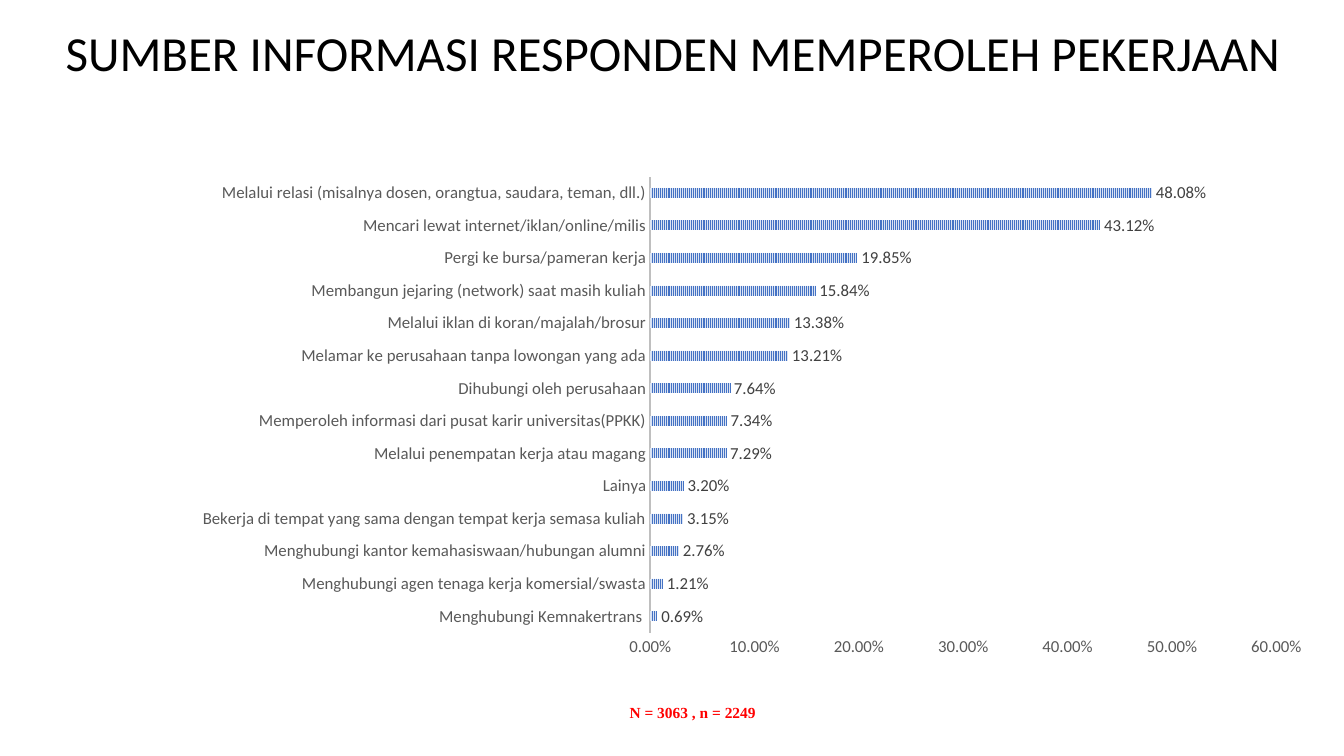
from pptx import Presentation
from pptx.chart.data import CategoryChartData
from pptx.dml.color import RGBColor
from pptx.enum.chart import XL_CHART_TYPE as ChartType
from pptx.enum.chart import XL_LABEL_POSITION as LabelPos
from pptx.enum.chart import XL_TICK_MARK as Tick
from pptx.enum.dml import MSO_PATTERN as Pattern
from pptx.enum.text import MSO_ANCHOR as Anchor
from pptx.enum.text import PP_ALIGN as Align
from pptx.oxml import parse_xml
from pptx.oxml.ns import nsdecls, qn
from pptx.util import Inches, Pt

COLORS = {
    "black": "000000", "axis_text": "595959", "axis_line": "BFBFBF",
    "label": "404040", "bar": "4472C4", "bar_back": "DAE3F3", "note": "FF0000",
}
PERCENT = "0.00%"

SOURCES = [
    ("Menghubungi Kemnakertrans ", 0.0069),
    ("Menghubungi agen tenaga kerja komersial/swasta", 0.0121),
    ("Menghubungi kantor kemahasiswaan/hubungan alumni", 0.0276),
    ("Bekerja di tempat yang sama dengan tempat kerja semasa kuliah", 0.0315),
    ("Lainya", 0.032),
    ("Melalui penempatan kerja atau magang", 0.0729),
    ("Memperoleh informasi dari pusat karir universitas(PPKK)", 0.0734),
    ("Dihubungi oleh perusahaan", 0.0764),
    ("Melamar ke perusahaan tanpa lowongan yang ada", 0.1321),
    ("Melalui iklan di koran/majalah/brosur", 0.1338),
    ("Membangun jejaring (network) saat masih kuliah", 0.1584),
    ("Pergi ke bursa/pameran kerja", 0.1985),
    ("Mencari lewat internet/iklan/online/milis", 0.4312),
    ("Melalui relasi (misalnya dosen, orangtua, saudara, teman, dll.)", 0.4808),
]


def rgb(name):
    return RGBColor.from_string(COLORS[name])


def set_font(font, size, color, name="Calibri", bold=False):
    font.size, font.name, font.bold = Pt(size), name, bold
    font.color.rgb = rgb(color)


def write(tf, text, align=Align.LEFT, spacing=1.0, **style):
    p = tf.paragraphs[0]
    p.alignment, p.line_spacing = align, spacing
    r = p.add_run()
    r.text = text
    set_font(r.font, **style)


class SlideBuilder:
    def __init__(self, prs, font="Calibri"):
        self.font = font
        self.s = prs.slides.add_slide(prs.slide_layouts[5])

    def title(self, text, x, y, w, h):
        sp = self.s.shapes.title
        sp.left, sp.top, sp.width, sp.height = map(Inches, (x, y, w, h))
        tf = sp.text_frame
        tf.word_wrap, tf.vertical_anchor = True, Anchor.MIDDLE
        write(tf, text, spacing=0.9, size=35, color="black", name=self.font)

    def bar_chart(self, rows, x, y, w, h, plot_area):
        data = CategoryChartData(number_format=PERCENT)
        data.categories = [name for name, _ in rows]
        data.add_series("Series 1", [value for _, value in rows])
        chart = self.s.shapes.add_chart(
            ChartType.BAR_CLUSTERED, *map(Inches, (x, y, w, h)), data).chart
        set_font(chart.font, 10, "black", self.font)
        chart.has_legend = chart.has_title = False

        # Bars and their labels
        plot = chart.plots[0]
        plot.gap_width, plot.overlap, plot.vary_by_categories = 227, -48, False
        fill = plot.series[0].format.fill
        fill.patterned()
        fill.pattern = Pattern.NARROW_VERTICAL
        fill.fore_color.rgb, fill.back_color.rgb = rgb("bar"), rgb("bar_back")
        plot.has_data_labels = True
        labels = plot.data_labels
        labels.show_value, labels.position = True, LabelPos.OUTSIDE_END
        labels.number_format, labels.number_format_is_linked = PERCENT, False
        set_font(labels.font, 12, "label", self.font)

        # Axes
        cat, val = chart.category_axis, chart.value_axis
        for axis in (cat, val):
            axis.major_tick_mark = axis.minor_tick_mark = Tick.NONE
            axis.has_major_gridlines = False
            set_font(axis.tick_labels.font, 12, "axis_text", self.font)
        cat.format.line.color.rgb = rgb("axis_line")
        cat.format.line.width = Pt(1.5)
        val.format.line.fill.background()
        val.minimum_scale, val.maximum_scale, val.major_unit = 0, 0.6, 0.1
        val.tick_labels.number_format = PERCENT
        val.tick_labels.number_format_is_linked = False
        self.place_plot(chart, plot_area)

    def place_plot(self, chart, plot_area):
        area = chart.element.find(".//" + qn("c:plotArea"))
        for old in area.findall(qn("c:layout")):
            area.remove(old)
        parts = [f'<c:{tag} val="edge"/>' for tag in ("xMode", "yMode")]
        parts += [f'<c:{tag} val="{v}"/>' for tag, v in zip("xywh", plot_area)]
        area.insert(0, parse_xml(
            f'<c:layout {nsdecls("c")}><c:manualLayout>'
            f'<c:layoutTarget val="inner"/>{"".join(parts)}'
            '</c:manualLayout></c:layout>'))

    def note_table(self, text, x, y, w, h):
        table = self.s.shapes.add_table(1, 1, *map(Inches, (x, y, w, h))).table
        table.first_row = table.horz_banding = False
        cell = table.cell(0, 0)
        cell.fill.background()
        write(cell.text_frame, text, align=Align.CENTER, size=11,
              color="note", name="Times New Roman", bold=True)


def main():
    prs = Presentation()
    prs.slide_width, prs.slide_height = Inches(13.33), Inches(7.5)
    slide = SlideBuilder(prs)
    slide.title("SUMBER INFORMASI RESPONDEN MEMPEROLEH PEKERJAAN",
                0.55, 0.1, 12.42, 0.9)
    slide.bar_chart(SOURCES, 0.55, 1.48, 12.42, 5.13,
                    plot_area=(0.475, 0.053, 0.5, 0.882))
    slide.note_table("N = 3063 , n = 2249", 6.07, 6.94, 1.6, 0.33)
    prs.save("out.pptx")


if __name__ == "__main__":
    main()
